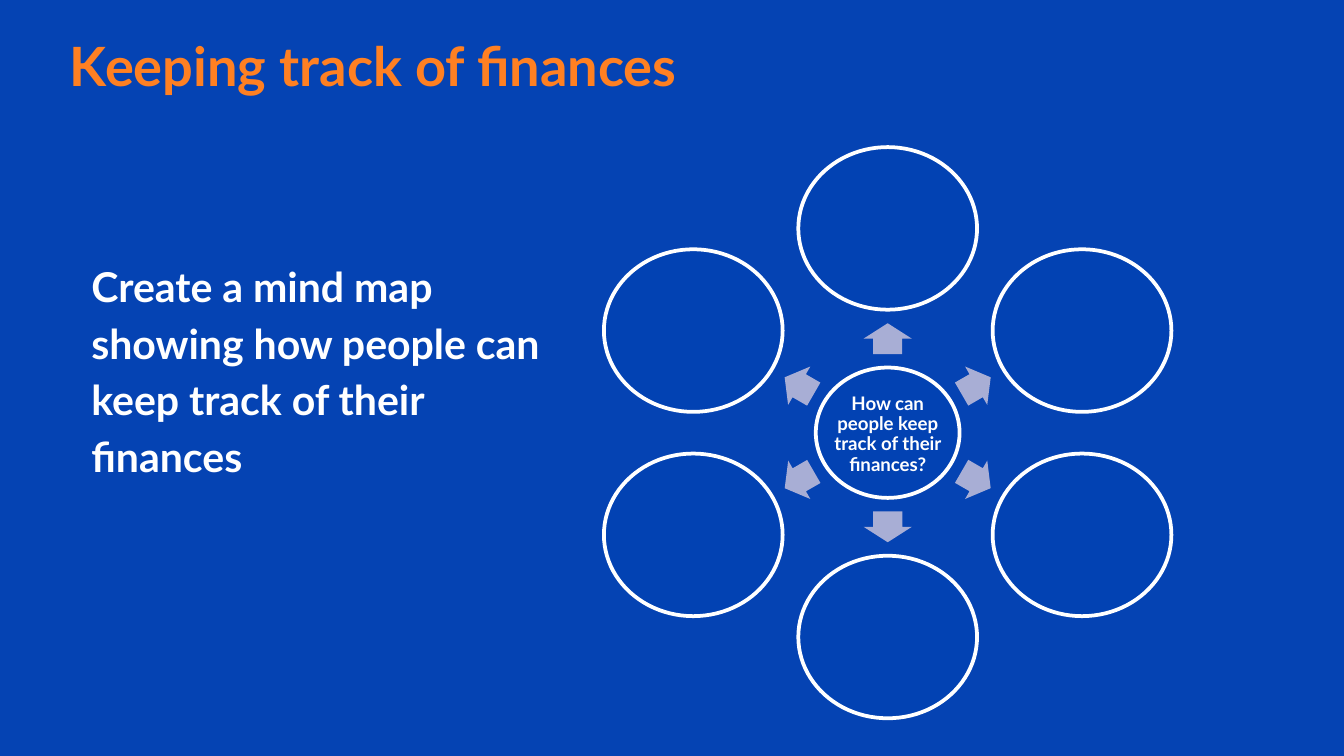
import math

from pptx import Presentation
from pptx.dml.color import RGBColor
from pptx.enum import shapes, text
from pptx.util import Inches, Pt

WHITE, NAVY, LILAC, ORANGE = "FFFFFF", "0242B3", "A8AED5", "FF8022"
SHAPE = shapes.MSO_SHAPE
LEFT, MID = text.PP_ALIGN.LEFT, text.PP_ALIGN.CENTER


def paint(fill, color):
    fill.solid()
    fill.fore_color.rgb = RGBColor.from_string(color)


def place(part, box):
    for name, val in zip(("left", "top", "width", "height"), box):
        setattr(part, name, Inches(val))


def write(part, words, size, color, align, space, inset, anchor):
    frame = part.text_frame
    frame.text = words
    look = {"word_wrap": True, "auto_size": text.MSO_AUTO_SIZE.NONE,
            "vertical_anchor": anchor}
    for side in ("left", "top", "right", "bottom"):
        look[f"margin_{side}"] = Inches(inset)
    for name, val in look.items():
        setattr(frame, name, val)
    para = frame.paragraphs[0]
    for name, val in {"alignment": align, "line_spacing": space,
                      "space_before": Pt(0)}.items():
        setattr(para, name, val)
    font = para.runs[0].font
    for name, val in {"name": "Lato", "size": Pt(size), "bold": True}.items():
        setattr(font, name, val)
    font.color.rgb = RGBColor.from_string(color)


def center(group, kind, x, y, wide, high, color):
    """Add a shape around its center point."""
    part = group.shapes.add_shape(kind, 0, 0, 0, 0)
    place(part, (x - wide / 2, y - high / 2, wide, high))
    part.shadow.inherit = False
    paint(part.fill, color)
    part.line.fill.background()
    return part


def bubble(group, x, y, wide, high):
    part = center(group, SHAPE.OVAL, x, y, wide, high, NAVY)
    paint(part.line.fill, WHITE)
    part.line.width = Pt(2)


def draw_map(slide, box, words):
    left, top, wide, high = box
    x, y = left + wide / 2, top + high / 2
    group = slide.shapes.add_group_shape()

    # Hub and its question
    bubble(group, x, y, 1.07, 0.97)
    label = group.shapes.add_textbox(0, 0, 0, 0)
    place(label, (x - 0.46, y - 0.33, 0.92, 0.69))
    write(label, words, 10, WHITE, MID, 0.9, 0.01, text.MSO_ANCHOR.MIDDLE)

    # Six empty bubbles, each with an arrow from the hub
    for turn in range(-90, 270, 60):
        cos, sin = math.cos(math.radians(turn)), math.sin(math.radians(turn))
        size = (0.23, 0.36) if turn % 180 == 90 else (0.25, 0.33)
        arrow = center(group, SHAPE.RIGHT_ARROW, x + 0.76 * cos,
                       y + 0.7 * sin, *size, LILAC)
        arrow.adjustments[0] = 0.6
        arrow.rotation = turn % 360
        bubble(group, x + 1.67 * cos, y + 1.52 * sin, 1.33, 1.21)


def draw_text(slide, title, task):
    # Heading
    head, body = slide.placeholders
    place(head, (0.42, 0.2, 8.46, 0.56))
    write(head, title, 29, ORANGE, LEFT, 1.0, 0.1, text.MSO_ANCHOR.MIDDLE)

    # Task for the class
    place(body, (0.58, 1.79, 3.59, 1.85))
    write(body, task, 22, WHITE, LEFT, 1.15, 0.1, text.MSO_ANCHOR.TOP)


def main():
    deck = Presentation()
    deck.slide_width = Inches(10)
    deck.slide_height = deck.slide_width * 9 // 16
    slide = deck.slides.add_slide(deck.slide_layouts[0])
    paint(slide.background.fill, "0543B3")
    draw_map(slide, (4.49, 1.09, 4.23, 4.26),
             "How can people keep track of their finances?")
    draw_text(slide, "Keeping track of finances",
              "Create a mind map showing how people can keep track "
              "of their finances")
    deck.save("out.pptx")


if __name__ == "__main__":
    main()
